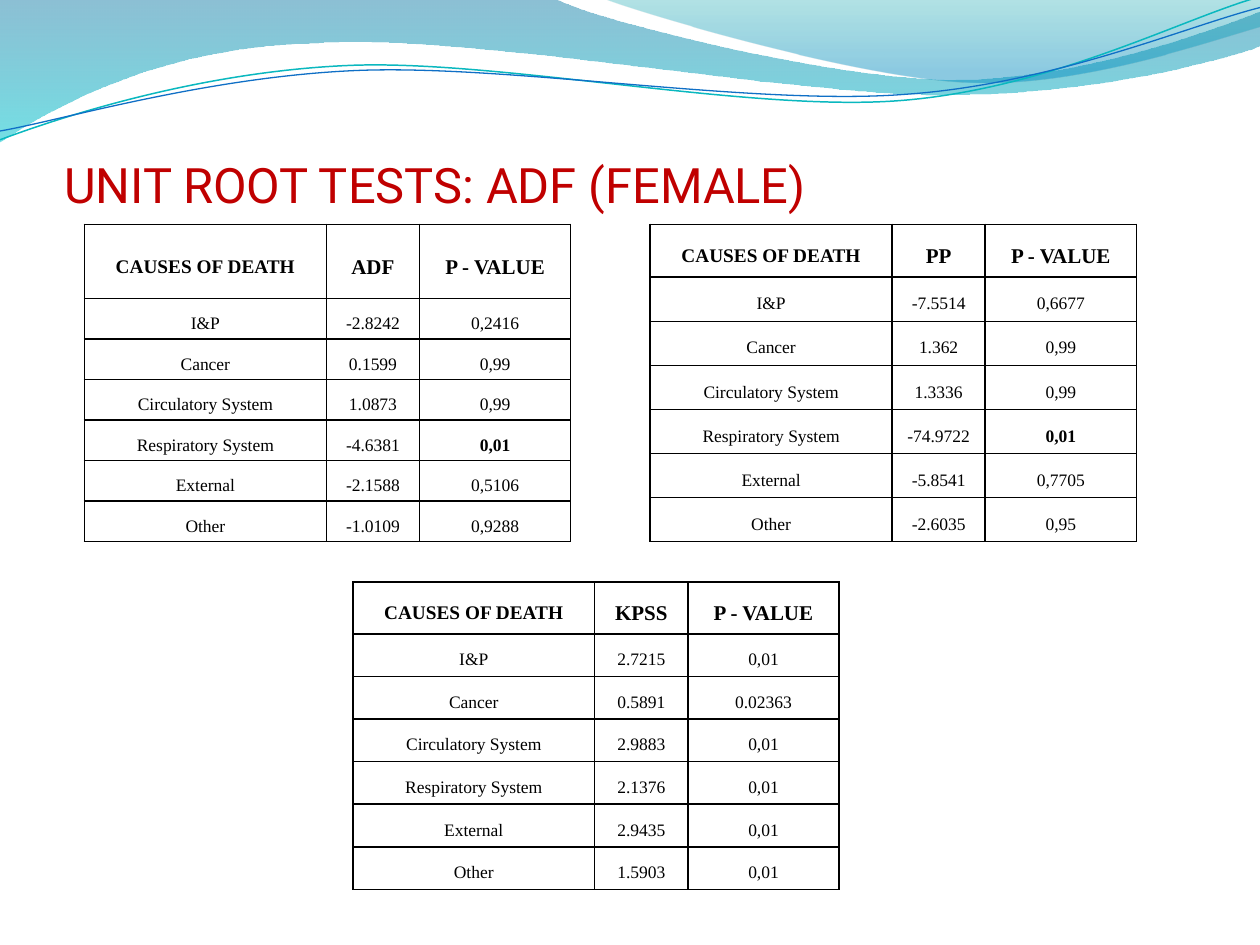
from lxml import etree
from pptx import Presentation
from pptx.dml.color import RGBColor
from pptx.enum.text import MSO_ANCHOR, MSO_AUTO_SIZE, PP_ALIGN
from pptx.oxml import parse_xml
from pptx.oxml.ns import nsdecls, qn
from pptx.util import Inches, Pt

CENTER, LEFT = PP_ALIGN.CENTER, PP_ALIGN.LEFT
MIDDLE, BOTTOM = MSO_ANCHOR.MIDDLE, MSO_ANCHOR.BOTTOM
NO_AUTOFIT = MSO_AUTO_SIZE.NONE

THEME = {
    "title": {"name": "Roboto", "size": Pt(27.9), "bold": False, "color": "C00000"},
    "cause_head": {"name": "Times New Roman", "size": Pt(11), "bold": True, "color": "000000"},
    "value_head": {"name": "Times New Roman", "size": Pt(12), "bold": True, "color": "000000"},
    "cell": {"name": "Times New Roman", "size": Pt(10), "bold": False, "color": "000000"},
    "border": "000000",
    # gradient stops: position, colour, opacity in percent
    "left_wave": [(0, "0074A1", 45), (1, "00C6CF", 55)],
    "right_wave": [(0, "00A1A9", 30), (0.8, "008BBF", 45)],
    "teal_line": ("0AB8BF", 0.85),
    "blue_line": ("0F6FC6", 0.75),
}


def add_wave(s, start, segments, close):
    """Draw an outline whose segments are line ends (2 numbers) or Bézier curves (6)."""
    points = [(Inches(x), Inches(y)) for seg in segments for x, y in zip(seg[::2], seg[1::2])]
    builder = s.shapes.build_freeform(Inches(start[0]), Inches(start[1]))
    builder.add_line_segments(points, close=close)
    sp = builder.convert_to_shape()
    sp.shadow.inherit = False
    # Join the three points of each curve into one Bézier segment
    steps = iter(list(sp._element.iter(qn("a:lnTo"))))
    for seg in segments:
        step = next(steps)
        if len(seg) == 6:
            step.tag = qn("a:cubicBezTo")
            for extra in (next(steps), next(steps)):
                step.append(extra[0])
                extra.getparent().remove(extra)
    return sp


def write(tf, text, style, align):
    p = tf.paragraphs[0]
    p.alignment = align
    r = p.add_run()
    r.text = text
    for name, value in style.items():
        if name == "color":
            r.font.color.rgb = RGBColor.from_string(value)
        else:
            setattr(r.font, name, value)
    return p


prs = Presentation()
prs.slide_width, prs.slide_height = Inches(10), Inches(7.5)
s = prs.slides.add_slide(prs.slide_layouts[5])

# Wave bands across the top
bands = [
    ("left_wave", (0, 0), [
        (4.4, -0.01),
        (4.76, 0.17, 6.64, 0.63, 7.58, 0.63),
        (8.53, 0.63, 9.58, 0.26, 10, 0.09),
        (10.01, 0.36),
        (9.83, 0.44, 8.7, 0.76, 7.46, 0.75),
        (6.22, 0.75, 3.82, 0.28, 2.57, 0.34),
        (1.29, 0.36, 0.46, 0.83, -0.01, 1.13),
        (0, 0)]),
    ("right_wave", (4.79, -0.01), [
        (5.09, 0.11, 6.82, 0.62, 7.69, 0.65),
        (8.56, 0.69, 9.61, 0.32, 10, 0.21),
        (10, 0),
        (4.79, -0.01)]),
]
for name, start, segments in bands:
    sp = add_wave(s, start, segments, True)
    sp.line.fill.background()
    sp.fill.gradient()
    sp.fill.gradient_angle = 270
    for stop, (position, color, _) in zip(sp.fill.gradient_stops, THEME[name]):
        stop.position = position
        stop.color.rgb = RGBColor.from_string(color)
    for clr, (_, _, opacity) in zip(sp._element.spPr.iter(qn("a:srgbClr")), THEME[name]):
        etree.SubElement(clr, qn("a:alpha")).set("val", str(opacity * 1000))

wave_lines = [
    ("teal_line", (0, 1.11), [
        (0.48, 0.93, 1.58, 0.57, 2.77, 0.52),
        (3.95, 0.47, 5.93, 0.89, 7.13, 0.8),
        (8.33, 0.71, 9.38, 0.15, 9.98, -0.02)]),
    ("blue_line", (0, 1.04), [
        (0.47, 0.96, 1.64, 0.61, 2.83, 0.56),
        (4.03, 0.51, 5.97, 0.84, 7.17, 0.75),
        (8.36, 0.67, 9.41, 0.21, 10, 0.06)]),
]
for name, start, segments in wave_lines:
    sp = add_wave(s, start, segments, False)
    color, width = THEME[name]
    sp.fill.background()
    sp.line.color.rgb = RGBColor.from_string(color)
    sp.line.width = Pt(width)

# Title, in front of the waves
title = s.shapes.title
title._element.getparent().append(title._element)
title.left, title.top, title.width, title.height = map(Inches, (0.51, 1.07, 9, 0.62))
tf = title.text_frame
frame = {"auto_size": NO_AUTOFIT, "word_wrap": True, "vertical_anchor": BOTTOM,
         "margin_left": 0, "margin_top": Inches(0.05), "margin_right": 0, "margin_bottom": 0}
for name, value in frame.items():
    setattr(tf, name, value)
write(tf, "UNIT ROOT TESTS: ADF (FEMALE)", THEME["title"], LEFT)

# One table per test
causes = ["I&P", "Cancer", "Circulatory System", "Respiratory System", "External", "Other"]
col_widths = [1.92, 0.74, 1.2]
cell_format = {"vertical_anchor": MIDDLE, "margin_left": Inches(0.07),
               "margin_right": Inches(0.07), "margin_top": 0, "margin_bottom": 0}
# test, left, top, height, header height, causes with a bold p-value, statistics, p-values
tests = [
    ("ADF", 0.67, 1.78, 2.52, 0.59, ["Respiratory System"],
     ["-2.8242", "0.1599", "1.0873", "-4.6381", "-2.1588", "-1.0109"],
     ["0,2416", "0,99", "0,99", "0,01", "0,5106", "0,9288"]),
    ("PP", 5.16, 1.78, 2.52, 0.42, ["Respiratory System"],
     ["-7.5514", "1.362", "1.3336", "-74.9722", "-5.8541", "-2.6035"],
     ["0,6677", "0,99", "0,99", "0,01", "0,7705", "0,95"]),
    ("KPSS", 2.8, 4.62, 2.44, 0.41, [],
     ["2.7215", "0.5891", "2.9883", "2.1376", "2.9435", "1.5903"],
     ["0,01", "0.02363", "0,01", "0,01", "0,01", "0,01"]),
]
for test, left, top, height, head_height, bold_causes, statistics, p_values in tests:
    rows = [("CAUSES OF DEATH", test, "P - VALUE"), *zip(causes, statistics, p_values)]
    table = s.shapes.add_table(len(rows), len(col_widths), Inches(left), Inches(top),
                               Inches(sum(col_widths)), Inches(height)).table
    table.first_row = table.horz_banding = False
    for column, width in zip(table.columns, col_widths):
        column.width = Inches(width)
    row_height = (height - head_height) / len(causes)
    for i, row in enumerate(rows):
        table.rows[i].height = Inches(row_height if i else head_height)
        for j, text in enumerate(row):
            cell = table.cell(i, j)
            for name, value in cell_format.items():
                setattr(cell, name, value)
            if i == 0:
                style = THEME["value_head" if j else "cause_head"]
            else:
                style = {**THEME["cell"], "bold": j == 2 and row[0] in bold_causes}
            write(cell.text_frame, text, style, CENTER).line_spacing = 1.5
            tcPr = cell._tc.get_or_add_tcPr()
            for side in "LRTB":
                tcPr.append(parse_xml(
                    f'<a:ln{side} {nsdecls("a")} w="{Pt(1)}"><a:solidFill>'
                    f'<a:srgbClr val="{THEME["border"]}"/></a:solidFill></a:ln{side}>'))
            cell.fill.background()

prs.save("out.pptx")
